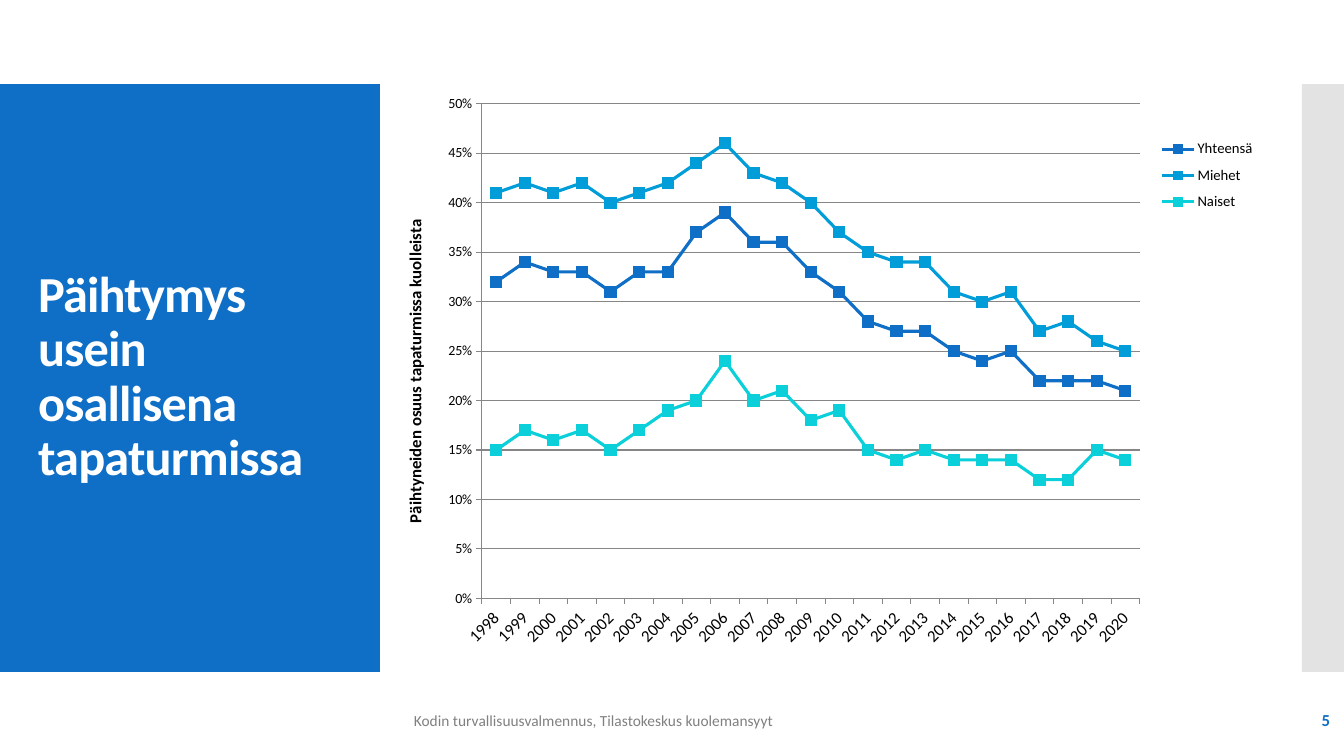
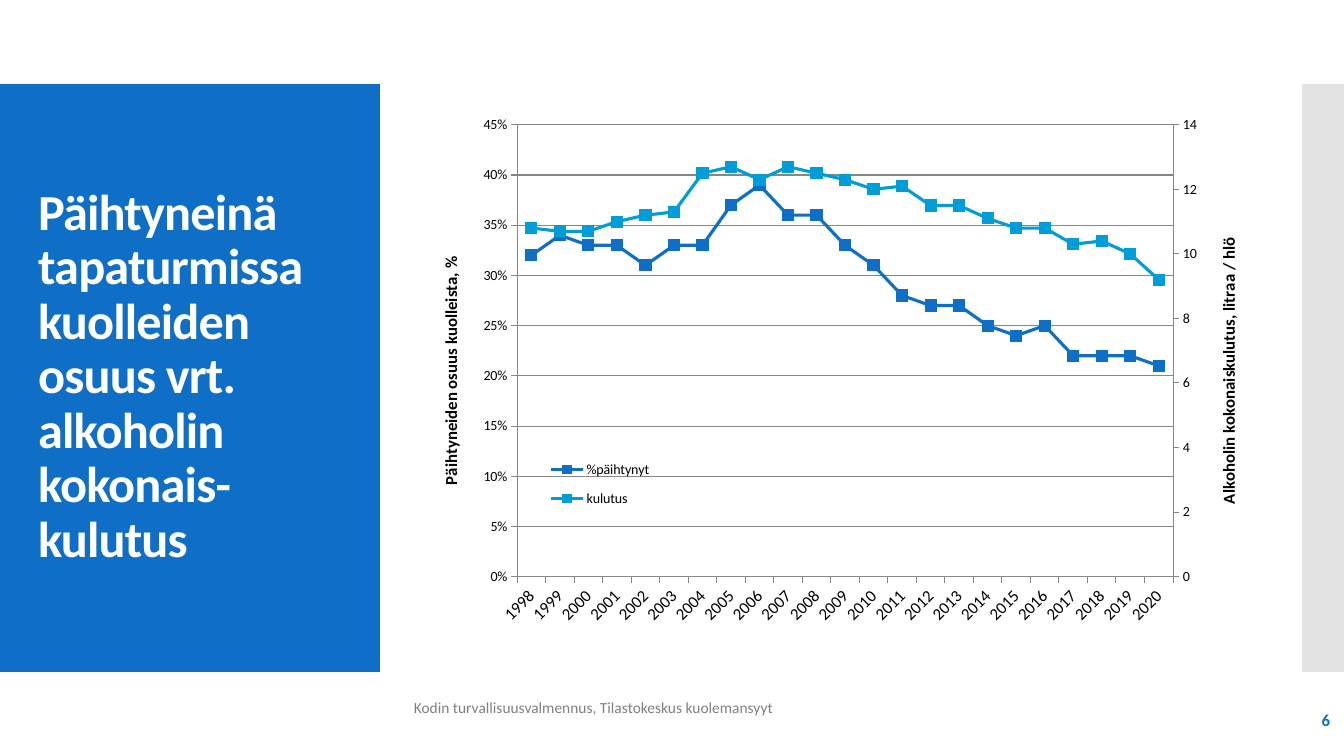
from copy import deepcopy
from lxml.etree import SubElement
from pptx import Presentation
from pptx.chart.data import CategoryChartData
from pptx.dml.color import RGBColor
from pptx.enum.chart import XL_CHART_TYPE, XL_LEGEND_POSITION, XL_MARKER_STYLE, XL_TICK_MARK
from pptx.enum.shapes import MSO_SHAPE
from pptx.enum.text import MSO_ANCHOR, MSO_AUTO_SIZE, PP_ALIGN
from pptx.oxml import parse_xml
from pptx.oxml.ns import nsdecls, qn
from pptx.util import Emu, Pt

EMU_PER_PX = 914400 / 100.8
FONT = "Calibri"
COLORS = {
    "blue": "0F6FC6", "sky": "009DD9", "aqua": "0BD0D9", "white": "FFFFFF",
    "black": "000000", "band": "C8C8C8", "footer": "808080", "axis": "868686",
}
SERIES_COLORS = ["blue", "sky", "aqua"]
BANDS = [("blue", 100, (0, 84, 380, 588)), ("band", 50, (1302, 84, 42, 588))]
TITLE_BOX = (28, 124, 325, 507)
NUMBER_BOX = (1172, 700, 168, 40)
FOOTER = "Kodin turvallisuusvalmennus, Tilastokeskus kuolemansyyt"

YEARS = [str(year) for year in range(1998, 2021)]
TOTAL = [0.32, 0.34, 0.33, 0.33, 0.31, 0.33, 0.33, 0.37, 0.39, 0.36, 0.36, 0.33,
         0.31, 0.28, 0.27, 0.27, 0.25, 0.24, 0.25, 0.22, 0.22, 0.22, 0.21]
MEN = [0.41, 0.42, 0.41, 0.42, 0.4, 0.41, 0.42, 0.44, 0.46, 0.43, 0.42, 0.4,
       0.37, 0.35, 0.34, 0.34, 0.31, 0.3, 0.31, 0.27, 0.28, 0.26, 0.25]
WOMEN = [0.15, 0.17, 0.16, 0.17, 0.15, 0.17, 0.19, 0.2, 0.24, 0.2, 0.21, 0.18,
         0.19, 0.15, 0.14, 0.15, 0.14, 0.14, 0.14, 0.12, 0.12, 0.15, 0.14]
CONSUMPTION = [10.8, 10.7, 10.7, 11, 11.2, 11.3, 12.5, 12.7, 12.3, 12.7, 12.5, 12.3,
               12, 12.1, 11.5, 11.5, 11.1, 10.8, 10.8, 10.3, 10.4, 10, 9.2]

SLIDES = [
    {
        "number": "5",
        "title": "Päihtymys usein osallisena tapaturmissa",
        "footer_box": (404, 700, 674, 40),
        "chart_box": (383, 86, 883, 574),
        "plot_box": (482, 104, 658, 495),
        "legend_box": (1155, 132, 105, 87),
        "legend_size": 10.5,
        "axis_title": "Päihtyneiden osuus tapaturmissa kuolleista",
        "maximum": 0.5,
        "series": [("Yhteensä", TOTAL), ("Miehet", MEN), ("Naiset", WOMEN)],
    },
    {
        "number": "6",
        "title": "Päihtyneinä tapaturmissa kuolleiden osuus vrt. alkoholin kokonais-kulutus",
        "footer_box": (404, 687, 674, 40),
        "chart_box": (414, 98, 852, 560),
        "plot_box": (517, 125, 656, 452),
        "legend_box": (545, 449, 110, 70),
        "legend_size": 10,
        "axis_title": "Päihtyneiden osuus kuolleista, %",
        "maximum": 0.45,
        "series": [("%päihtynyt", TOTAL), ("kulutus", CONSUMPTION)],
        "right_axis": {"title": "Alkoholin kokonaiskulutus, litraa / hlö",
                       "maximum": 14, "unit": 2},
    },
]


def emu(box):
    return [Emu(round(length * EMU_PER_PX)) for length in box]


def rgb(name):
    return RGBColor.from_string(COLORS[name])


def style_font(font, size, color, bold=False):
    font.name, font.size, font.bold = FONT, Pt(size), bold
    font.color.rgb = rgb(color)


def style_line(line, color, width):
    line.color.rgb = rgb(color)
    line.width = Pt(width)


def add_bands(slide):
    layout_tree = slide.slide_layout.shapes.element
    for index, (color, opacity, box) in enumerate(BANDS):
        band = slide.shapes.add_shape(MSO_SHAPE.RECTANGLE, *emu(box))
        band.shadow.inherit = False
        band.fill.solid()
        band.fill.fore_color.rgb = rgb(color)
        band.line.fill.background()
        if opacity < 100:
            fill = band.element.find(".//" + qn("a:srgbClr"))
            SubElement(fill, qn("a:alpha")).set("val", str(opacity * 1000))
        band.element.find(".//" + qn("p:cNvPr")).set("id", str(100 + index))
        layout_tree.append(band.element)


def set_title(slide, text):
    title = slide.shapes.title
    title.left, title.top, title.width, title.height = emu(TITLE_BOX)
    frame = title.text_frame
    frame.text = text
    frame.word_wrap = True
    frame.auto_size = MSO_AUTO_SIZE.NONE
    frame.vertical_anchor = MSO_ANCHOR.MIDDLE
    paragraph = frame.paragraphs[0]
    paragraph.alignment = PP_ALIGN.LEFT
    paragraph.line_spacing = 0.9
    run = paragraph.runs[0]
    style_font(run.font, 36, "white", True)
    run.font._element.set("spc", "-60")


def add_label(slide, text, box, size, color, bold=False, alignment=PP_ALIGN.LEFT):
    frame = slide.shapes.add_textbox(*emu(box)).text_frame
    frame.text = text
    frame.word_wrap = True
    frame.vertical_anchor = MSO_ANCHOR.MIDDLE
    paragraph = frame.paragraphs[0]
    paragraph.alignment = alignment
    paragraph.space_after = Pt(6)
    style_font(paragraph.runs[0].font, size, color, bold)


def set_layout(parent, position, box, chart_box, target=""):
    old = parent.find(qn("c:layout"))
    if old is not None:
        parent.remove(old)
    left, top, width, height = chart_box
    fractions = {"x": (box[0] - left) / width, "y": (box[1] - top) / height,
                 "w": box[2] / width, "h": box[3] / height}
    sizes = "".join(f'<c:{key} val="{value:.3f}"/>' for key, value in fractions.items())
    parent.insert(position, parse_xml(
        f'<c:layout {nsdecls("c")}><c:manualLayout>{target}'
        f'<c:xMode val="edge"/><c:yMode val="edge"/>{sizes}</c:manualLayout></c:layout>'))


def style_axes(chart, content):
    category_axis, value_axis = chart.category_axis, chart.value_axis
    for axis in (category_axis, value_axis):
        axis.major_tick_mark = XL_TICK_MARK.OUTSIDE
        style_line(axis.format.line, "axis", 0.75)
    style_font(category_axis.tick_labels.font, 12, "black")
    category_axis._element.find(f'{qn("c:txPr")}/{qn("a:bodyPr")}').set("rot", "-2700000")

    style_font(value_axis.tick_labels.font, 10, "black")
    value_axis.tick_labels.number_format = "0%"
    value_axis.tick_labels.number_format_is_linked = False
    value_axis.minimum_scale = 0
    value_axis.maximum_scale = content["maximum"]
    value_axis.major_unit = 0.05
    value_axis.has_major_gridlines = True
    style_line(value_axis.major_gridlines.format.line, "axis", 0.75)
    frame = value_axis.axis_title.text_frame
    frame.text = content["axis_title"]
    style_font(frame.paragraphs[0].runs[0].font, 12, "black", True)
    body = frame._txBody.find(qn("a:bodyPr"))
    body.set("rot", "-5400000")
    body.set("vert", "horz")


def add_right_axis(plot_area, right_axis):
    left_lines = plot_area.find(qn("c:lineChart"))
    category_axis = plot_area.find(qn("c:catAx"))
    value_axis = plot_area.find(qn("c:valAx"))
    right_lines, right_category, right_value = [
        deepcopy(element) for element in (left_lines, category_axis, value_axis)]
    left_lines.remove(left_lines.findall(qn("c:ser"))[-1])
    for series in right_lines.findall(qn("c:ser"))[:-1]:
        right_lines.remove(series)

    new_ids = {category_axis.find(qn("c:axId")).get("val"): "201",
               value_axis.find(qn("c:axId")).get("val"): "202"}
    for element in (right_lines, right_category, right_value):
        for reference in element.iter(qn("c:axId"), qn("c:crossAx")):
            reference.set("val", new_ids[reference.get("val")])

    right_category.find(qn("c:delete")).set("val", "1")
    right_value.remove(right_value.find(qn("c:majorGridlines")))
    settings = {"c:axPos": "r", "c:crosses": "max", "c:majorUnit": right_axis["unit"]}
    for tag, value in settings.items():
        right_value.find(qn(tag)).set("val", str(value))
    right_value.find(".//" + qn("c:max")).set("val", str(right_axis["maximum"]))
    right_value.find(qn("c:numFmt")).set("formatCode", "General")
    right_value.find(".//" + qn("a:t")).text = right_axis["title"]

    left_lines.addnext(right_lines)
    value_axis.addnext(right_value)
    right_value.addnext(right_category)


def add_line_chart(slide, content):
    data = CategoryChartData()
    data.categories = YEARS
    for name, values in content["series"]:
        data.add_series(name, values)
    chart_box = content["chart_box"]
    chart = slide.shapes.add_chart(
        XL_CHART_TYPE.LINE_MARKERS, *emu(chart_box), data).chart
    chart.has_title = False
    style_font(chart.font, 10, "black")
    chart.plots[0].vary_by_categories = False
    for series, color in zip(chart.plots[0].series, SERIES_COLORS):
        series.smooth = False
        style_line(series.format.line, color, 2.25)
        marker = series.marker
        marker.style, marker.size = XL_MARKER_STYLE.SQUARE, 8
        marker.format.fill.solid()
        marker.format.fill.fore_color.rgb = rgb(color)
        style_line(marker.format.line, color, 0.75)
    style_axes(chart, content)

    chart.has_legend = True
    legend = chart.legend
    legend.position = XL_LEGEND_POSITION.RIGHT
    legend.include_in_layout = False
    style_font(legend.font, content["legend_size"], "black")
    set_layout(legend._element, 1, content["legend_box"], chart_box)
    plot_area = chart.element.find(".//" + qn("c:plotArea"))
    set_layout(plot_area, 0, content["plot_box"], chart_box,
               '<c:layoutTarget val="inner"/>')
    if "right_axis" in content:
        add_right_axis(plot_area, content["right_axis"])


def main():
    presentation = Presentation()
    presentation.slide_width, presentation.slide_height = emu((1344, 756))
    title_only = presentation.slide_layouts[5]
    for index, content in enumerate(SLIDES):
        slide = presentation.slides.add_slide(title_only)
        if index == 0:
            add_bands(slide)
        set_title(slide, content["title"])
        add_line_chart(slide, content)
        add_label(slide, FOOTER, content["footer_box"], 11, "footer")
        add_label(slide, content["number"], NUMBER_BOX, 12, "blue", True, PP_ALIGN.RIGHT)
    presentation.save("out.pptx")


if __name__ == "__main__":
    main()
